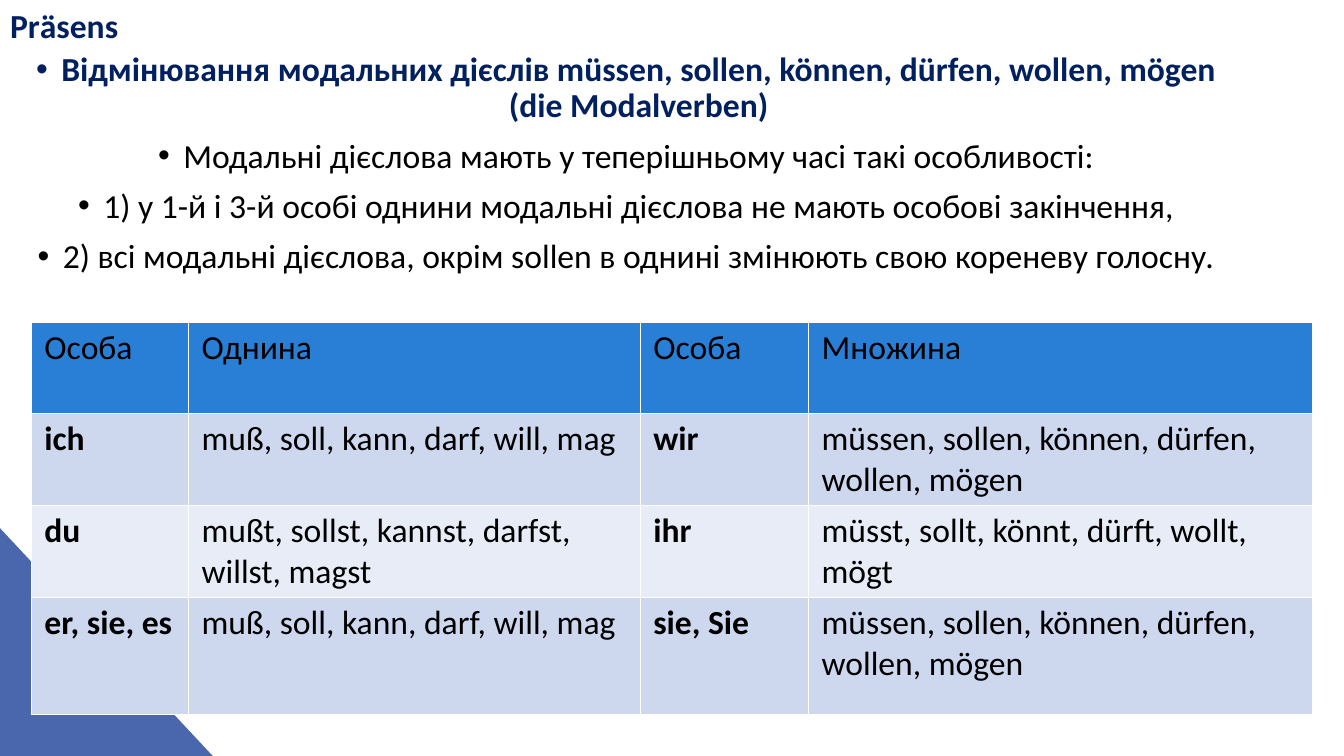
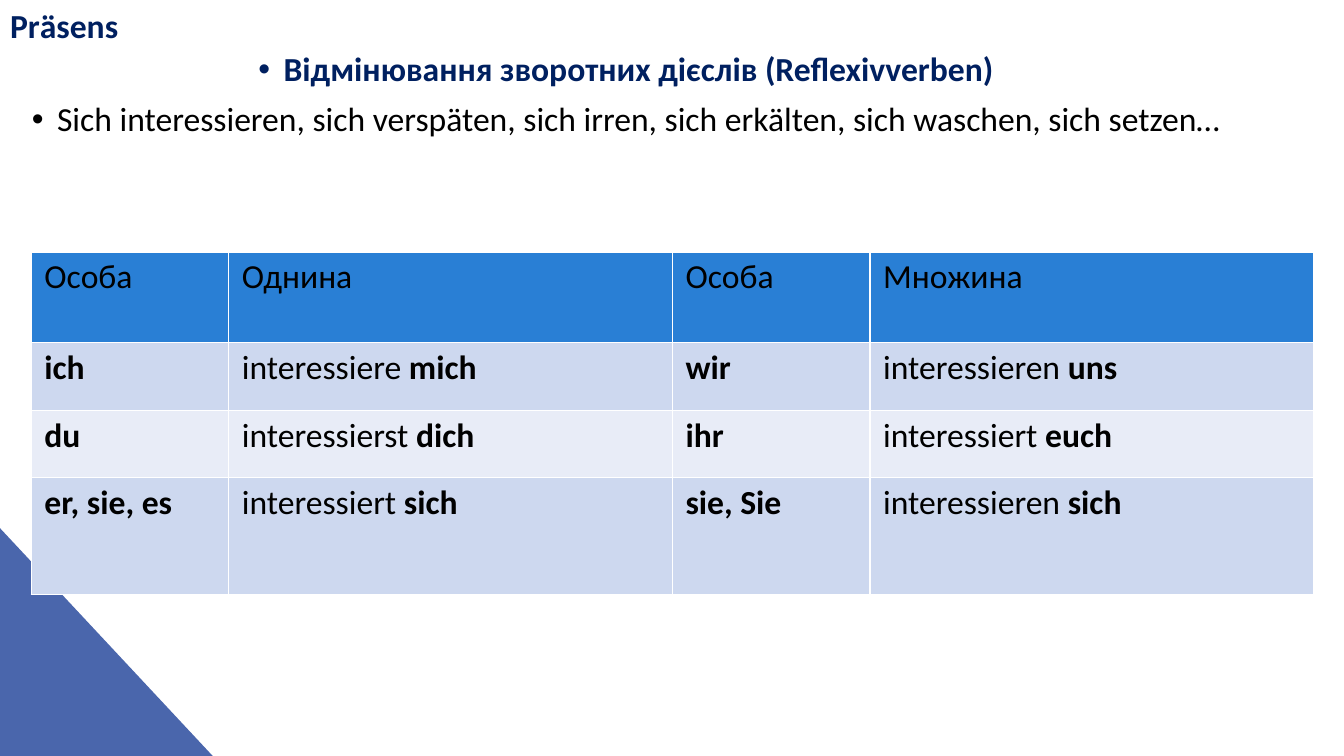
from lxml.etree import SubElement
from pptx import Presentation
from pptx.dml.color import RGBColor
from pptx.enum.shapes import MSO_SHAPE
from pptx.enum.text import MSO_ANCHOR, MSO_AUTO_SIZE, PP_ALIGN
from pptx.oxml.ns import qn
from pptx.util import Inches, Pt

NAVY, BLACK, WHITE = "002060", "000000", "FFFFFF"
CORNER_BLUE, HEADER_BLUE = "4A66AC", "297FD5"
ROW_FILLS = ("CDD8EF", "E8ECF7")
FONT = {"name": "Calibri", "size": Pt(24)}
TITLE_BOX = (0, 0, 1.87, 0.5)
CORNER_BOX = (0, 5.24, 2.11, 2.26)
HEADER = ("Особа", "Однина", "Особа", "Множина")
PERSONS = (("*ich*", "*wir*"), ("*du*", "*ihr*"), ("*er, sie, es*", "*sie, Sie*"))

LESSONS = [
    {
        "body": (
            "*Відмінювання модальних дієслів müssen, sollen, können, dürfen, wollen, mögen "
            "(die Modalverben)*",
            "Модальні дієслова мають у теперішньому часі такі особливості:",
            "1) у 1-й і 3-й особі однини модальні дієслова не мають особові закінчення,",
            "2) всі модальні дієслова, окрім sollen в однині змінюють свою кореневу голосну.",
        ),
        "body_box": (0.21, 0.47, 12, 2.66),
        "table_origin": (0.31, 3.2),
        "columns": (1.56, 4.48, 1.67, 5),
        "rows": (0.9, 0.9, 0.9, 1.16),
        "forms": (
            ("muß, soll, kann, darf, will, mag", "müssen, sollen, können, dürfen, wollen, mögen"),
            ("mußt, sollst, kannst, darfst, willst, magst",
             "müsst, sollt, könnt, dürft, wollt, mögt"),
            ("muß, soll, kann, darf, will, mag", "müssen, sollen, können, dürfen, wollen, mögen"),
        ),
    },
    {
        "body": (
            "*Відмінювання зворотних дієслів (Reflexivverben)*",
            "Sich interessieren, sich verspäten, sich irren, sich erkälten, sich waschen, "
            "sich setzen…",
        ),
        "body_box": (0.21, 0.47, 12, 4.95),
        "table_origin": (0.31, 2.5),
        "columns": (1.96, 4.4, 1.96, 4.4),
        "rows": (0.9, 0.67, 0.67, 1.16),
        "forms": (
            ("interessiere *mich*", "interessieren *uns*"),
            ("interessierst *dich*", "interessiert *euch*"),
            ("interessiert *sich*", "interessieren *sich*"),
        ),
    },
]


def colour(value):
    return RGBColor.from_string(value)


def set_attributes(target, values):
    for name, value in values.items():
        setattr(target, name, value)


def place(shape, box):
    lengths = map(Inches, box)
    set_attributes(shape, dict(zip(("left", "top", "width", "height"), lengths)))


def write_text(paragraph, text, text_colour=BLACK):
    """Add runs to the paragraph; parts between asterisks are bold."""
    for index, part in enumerate(text.split("*")):
        if part:
            run = paragraph.add_run()
            run.text = part
            set_attributes(run.font, {**FONT, "bold": index % 2 == 1})
            run.font.color.rgb = colour(text_colour)


def add_bullet(paragraph):
    properties = paragraph._p.get_or_add_pPr()
    properties.set("marL", str(Inches(0.25)))
    properties.set("indent", str(Inches(-0.25)))
    SubElement(properties, qn("a:buFont")).set("typeface", "Arial")
    SubElement(properties, qn("a:buChar")).set("char", "•")


def add_corner(slide, box):
    corner = slide.shapes.add_shape(MSO_SHAPE.RIGHT_TRIANGLE, *map(Inches, box))
    corner.shadow.inherit = False
    corner.fill.solid()
    corner.fill.fore_color.rgb = colour(CORNER_BLUE)
    corner.line.fill.background()


def fill_title(title, box):
    place(title, box)
    frame = title.text_frame
    set_attributes(frame, {"word_wrap": True, "auto_size": MSO_AUTO_SIZE.NONE,
                           "vertical_anchor": MSO_ANCHOR.TOP})
    frame.paragraphs[0].alignment = PP_ALIGN.LEFT
    write_text(frame.paragraphs[0], "*Prӓsens*", NAVY)


def fill_body(body, box, lines):
    place(body, box)
    frame = body.text_frame
    frame.auto_size = MSO_AUTO_SIZE.NONE
    for index, line in enumerate(lines):
        paragraph = frame.add_paragraph() if index else frame.paragraphs[0]
        add_bullet(paragraph)
        set_attributes(paragraph, {"alignment": PP_ALIGN.CENTER, "line_spacing": 0.9,
                                   "space_before": Pt(10 if index else 0)})
        write_text(paragraph, line, BLACK if index else NAVY)


def add_borders(cell):
    properties = cell._tc.get_or_add_tcPr()
    for side in ("lnL", "lnR", "lnT", "lnB"):
        line = SubElement(properties, qn(f"a:{side}"), w=str(Pt(1)))
        fill = SubElement(line, qn("a:solidFill"))
        SubElement(fill, qn("a:srgbClr"), val=WHITE)


def fill_cell(cell, text, fill):
    margins = {"margin_left": 0.13, "margin_right": 0.13,
               "margin_top": 0.05, "margin_bottom": 0.05}
    set_attributes(cell, {name: Inches(value) for name, value in margins.items()})
    add_borders(cell)
    cell.fill.solid()
    cell.fill.fore_color.rgb = colour(fill)
    write_text(cell.text_frame.paragraphs[0], text)


def add_verb_table(slide, origin, columns, rows, forms):
    box = (*origin, sum(columns), sum(rows))
    table = slide.shapes.add_table(len(rows), len(columns), *map(Inches, box)).table
    for column, width in zip(table.columns, columns):
        column.width = Inches(width)
    for row, height in zip(table.rows, rows):
        row.height = Inches(height)
    contents = [HEADER]
    for (singular, plural), (singular_form, plural_form) in zip(PERSONS, forms):
        contents.append((singular, singular_form, plural, plural_form))
    for row_index, texts in enumerate(contents):
        fill = ROW_FILLS[(row_index - 1) % 2] if row_index else HEADER_BLUE
        for column_index, text in enumerate(texts):
            fill_cell(table.cell(row_index, column_index), text, fill)


def add_lesson(presentation, lesson):
    slide = presentation.slides.add_slide(presentation.slide_layouts[1])
    add_corner(slide, CORNER_BOX)
    fill_title(slide.shapes.title, TITLE_BOX)
    fill_body(slide.placeholders[1], lesson["body_box"], lesson["body"])
    add_verb_table(slide, lesson["table_origin"], lesson["columns"], lesson["rows"],
                   lesson["forms"])


def main():
    presentation = Presentation()
    set_attributes(presentation, {"slide_width": Inches(13.33), "slide_height": Inches(7.5)})
    for lesson in LESSONS:
        add_lesson(presentation, lesson)
    presentation.save("out.pptx")


if __name__ == "__main__":
    main()
